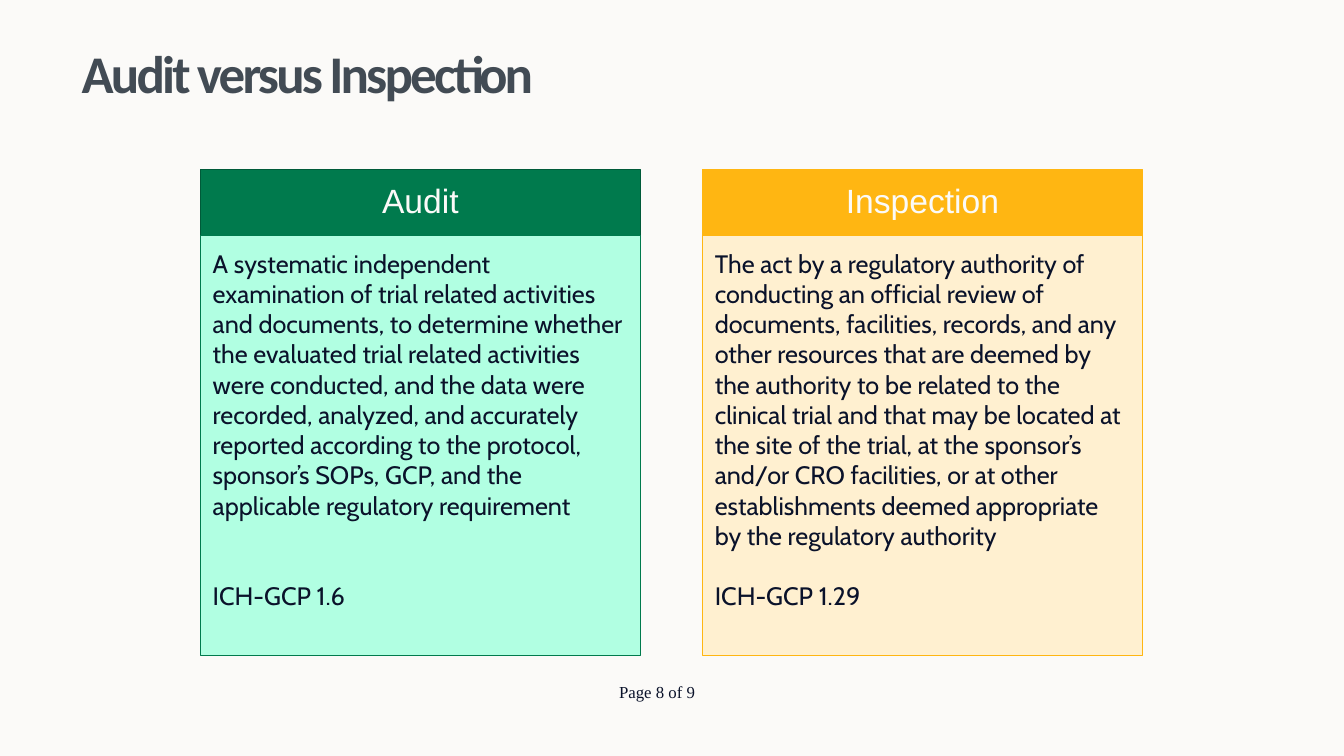
from dataclasses import dataclass

import pptx
import pptx.dml.color
import pptx.enum.shapes
import pptx.enum.text
import pptx.util

Inches = pptx.util.Inches
Pt = pptx.util.Pt
ALIGN = pptx.enum.text.PP_ALIGN
ANCHOR = pptx.enum.text.MSO_ANCHOR

PAPER = "FBFAF8"
INK = "0A122A"
LEFT = 1.99
STEP = 4.98
WIDTH = 4.36
TOP = 1.68
HEAD = 0.66
BODY = 4.16


@dataclass
class Card:
    title: str
    text: str
    source: str
    gap: float
    dark: str
    edge: str
    light: str


CARDS = [
    Card(
        "Audit",
        "A systematic independent examination of trial related activities and "
        "documents, to determine whether the evaluated trial related activities "
        "were conducted, and the data were recorded, analyzed, and accurately "
        "reported according to the protocol, sponsor’s SOPs, GCP, and the "
        "applicable regulatory requirement",
        "ICH-GCP 1.6", 43.2, "007A4D", "005A39", "B1FFE2",
    ),
    Card(
        "Inspection",
        "The act by a regulatory authority of conducting an official review of "
        "documents, facilities, records, and any other resources that are deemed "
        "by the authority to be related to the clinical trial and that may be "
        "located at the site of the trial, at the sponsor’s and/or CRO "
        "facilities, or at other establishments deemed appropriate by the "
        "regulatory authority",
        "ICH-GCP 1.29", 21.6, "FFB612", "FFB612", "FFF0D0",
    ),
]


def paint(color: pptx.dml.color.ColorFormat, value: str) -> None:
    color.rgb = pptx.dml.color.RGBColor.from_string(value)


def write(frame, text: str, font: str, size: float, color: str, align,
          anchor, pad: tuple[float, float, float, float]) -> None:
    frame.text = text
    frame.word_wrap = True
    frame.auto_size = pptx.enum.text.MSO_AUTO_SIZE.NONE
    frame.vertical_anchor = anchor
    frame.margin_left, frame.margin_top, frame.margin_right, frame.margin_bottom = map(Inches, pad)
    for line in frame.paragraphs:
        line.alignment = align
        for run in line.runs:
            run.font.name = font
            run.font.size = Pt(size)
            paint(run.font.color, color)


def add_box(slide, left: float, top: float, height: float, fill: str, edge: str):
    box = slide.shapes.add_shape(
        pptx.enum.shapes.MSO_SHAPE.RECTANGLE,
        Inches(left), Inches(top), Inches(WIDTH), Inches(height))
    box.shadow.inherit = False
    box.fill.solid()
    paint(box.fill.fore_color, fill)
    paint(box.line.color, edge)
    box.line.width = Pt(0.75)
    return box.text_frame


def add_card(slide, card: Card, left: float) -> None:
    head = add_box(slide, left, TOP, HEAD, card.dark, card.edge)
    write(head, card.title, "Arial", 24, PAPER, ALIGN.CENTER, ANCHOR.MIDDLE,
          (0.19, 0.11, 0.19, 0.11))
    head.paragraphs[0].line_spacing = 0.9
    body = add_box(slide, left, TOP + HEAD, BODY, card.light, card.dark)
    write(body, f"{card.text}\n{card.source}", "Cabin", 18, INK, ALIGN.LEFT,
          ANCHOR.TOP, (0.12, 0.12, 0.16, 0.18))
    body.paragraphs[1].space_before = Pt(card.gap)


def add_title(slide) -> None:
    title = slide.shapes.title
    title.left, title.top, title.width, title.height = map(Inches, (0.68, 0.33, 11.98, 0.78))
    write(title.text_frame, "Audit versus Inspection", "Calibri", 37.8, "424B54",
          ALIGN.LEFT, ANCHOR.MIDDLE, (0.13, 0.07, 0.13, 0.07))
    run = title.text_frame.paragraphs[0].runs[0]
    run.font.bold = True
    run.font._element.set("spc", "-200")


def add_page(slide) -> None:
    page = slide.shapes.add_textbox(*map(Inches, (5.09, 6.77, 2.41, 0.39))).text_frame
    write(page, "Page 8 of 9", "Times New Roman", 12, INK, ALIGN.LEFT, ANCHOR.TOP,
          (1.05, 0.01, 0, 0))
    page.paragraphs[0].line_spacing = Pt(13.2)


def main() -> None:
    deck = pptx.Presentation()
    deck.slide_width = Inches(13.33)
    deck.slide_height = Inches(7.5)
    slide = deck.slides.add_slide(deck.slide_layouts[5])
    slide.background.fill.solid()
    paint(slide.background.fill.fore_color, PAPER)
    add_title(slide)
    for index, card in enumerate(CARDS):
        add_card(slide, card, LEFT + index * STEP)
    add_page(slide)
    deck.save("out.pptx")


if __name__ == "__main__":
    main()
